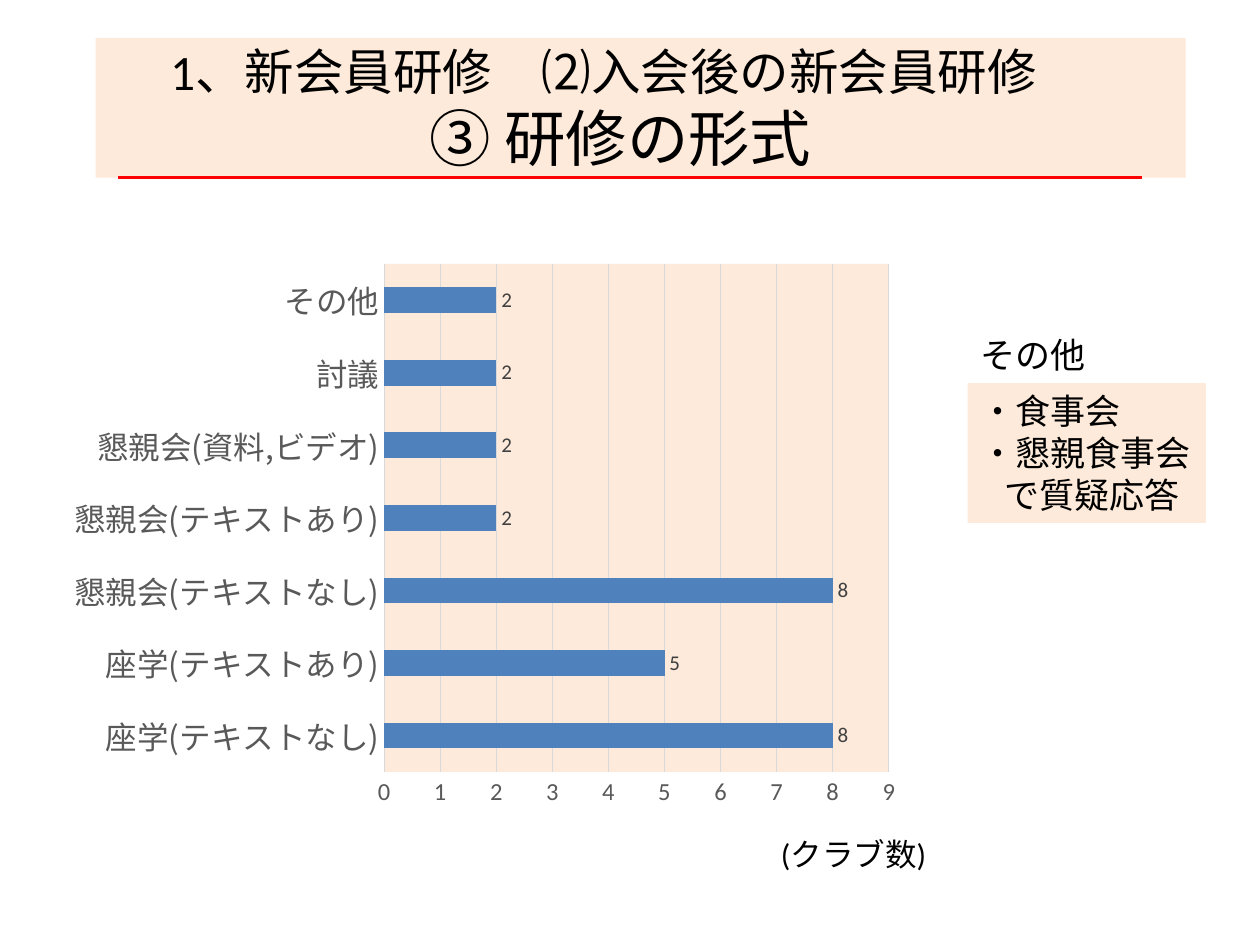
from lxml import etree
from pptx import Presentation
from pptx.chart.data import CategoryChartData
from pptx.dml.color import RGBColor
from pptx.enum.chart import XL_CHART_TYPE, XL_LABEL_POSITION, XL_TICK_MARK
from pptx.enum.shapes import MSO_CONNECTOR
from pptx.enum.text import MSO_ANCHOR, MSO_AUTO_SIZE, PP_ALIGN
from pptx.oxml import parse_xml
from pptx.oxml.ns import nsdecls, qn
from pptx.util import Inches, Pt

PEACH, GRID = "FDEADA", "D9D9D9"


def color(value):
    return RGBColor.from_string(value)


def style(font, size, value="000000", name="Calibri"):
    font.size, font.name = Pt(size), name
    font.color.rgb = color(value)


presentation = Presentation()
presentation.slide_width, presentation.slide_height = Inches(10), Inches(7.5)
slide = presentation.slides.add_slide(presentation.slide_layouts[1])
title, body = slide.placeholders

# Title and list panels
for panel, left, top, width, height in (
    (title, 0.76, 0.3, 8.65, 1.11),
    (body, 7.68, 3.04, 1.89, 1.11),
):
    panel.left, panel.top = Inches(left), Inches(top)
    panel.width, panel.height = Inches(width), Inches(height)
    panel.fill.solid()
    panel.fill.fore_color.rgb = color(PEACH)
    panel.text_frame.auto_size = MSO_AUTO_SIZE.NONE
    panel.text_frame.word_wrap = True

# Two-line title with a hanging indent
title.text_frame.vertical_anchor = MSO_ANCHOR.MIDDLE
paragraph = title.text_frame.paragraphs[0]
paragraph.alignment = PP_ALIGN.LEFT
properties = paragraph._p.get_or_add_pPr()
properties.set("marL", str(Inches(2.55)))
properties.set("indent", str(Inches(-2.06)))
run = paragraph.add_run()
run.text = "1、新会員研修　⑵入会後の新会員研修"
style(run.font, 28.3)
paragraph.add_line_break()
run = paragraph.add_run()
run.text = "③ 研修の形式　"
style(run.font, 35.1)

# List of other formats
for index, (item, hanging) in enumerate((("・食事会", 0), ("・懇親食事会で質疑応答", 0.19))):
    frame = body.text_frame
    paragraph = frame.add_paragraph() if index else frame.paragraphs[0]
    paragraph.space_before = Pt(0)
    properties = paragraph._p.get_or_add_pPr()
    properties.set("marL", str(Inches(hanging)))
    properties.set("indent", str(Inches(-hanging)))
    etree.SubElement(properties, qn("a:buNone"))
    run = paragraph.add_run()
    run.text = item
    style(run.font, 20)

# Red rule under the title
rule = slide.shapes.add_connector(
    MSO_CONNECTOR.STRAIGHT, Inches(0.94), Inches(1.41), Inches(9.06), Inches(1.41))
rule.line.color.rgb = color("FF0000")
rule.line.width = Pt(1.5)
etree.SubElement(rule._element.spPr, qn("a:effectLst"))

# Bar chart of training formats
chart_data = CategoryChartData()
chart_data.categories = [
    "座学(テキストなし)", "座学(テキストあり)", "懇親会(テキストなし)",
    "懇親会(テキストあり)", "懇親会(資料,ビデオ)", "討議", "その他"]
chart_data.add_series("Series 1", (8, 5, 8, 2, 2, 2, 2))
chart = slide.shapes.add_chart(
    XL_CHART_TYPE.BAR_CLUSTERED, Inches(0.59), Inches(1.54),
    Inches(6.72), Inches(5.04), chart_data).chart
chart.has_legend = chart.has_title = False
style(chart.font, 10)

plot = chart.plots[0]
plot.gap_width = 182
plot.vary_by_categories = False
series = plot.series[0]
series.format.fill.solid()
series.format.fill.fore_color.rgb = color("4F81BD")
labels = series.data_labels
labels.show_value = True
labels.position = XL_LABEL_POSITION.OUTSIDE_END
style(labels.font, 12, "404040")

category_axis, value_axis = chart.category_axis, chart.value_axis
for axis in (category_axis, value_axis):
    axis.major_tick_mark = axis.minor_tick_mark = XL_TICK_MARK.NONE
style(category_axis.tick_labels.font, 18, "595959", "Noto Sans CJK JP")
style(value_axis.tick_labels.font, 14, "595959")
value_axis.minimum_scale, value_axis.maximum_scale = 0, 9
value_axis.major_unit = 1
value_axis.format.line.fill.background()
for line in (category_axis.format.line, value_axis.major_gridlines.format.line):
    line.color.rgb = color(GRID)
    line.width = Pt(0.75)

# Plot area position and fill
plot_area = chart._chartSpace.chart.plotArea
for layout in plot_area.findall(qn("c:layout")):
    plot_area.remove(layout)
positions = "".join(
    f'<c:{tag} val="{value}"/>' for tag, value in (
        ("layoutTarget", "inner"), ("xMode", "edge"), ("yMode", "edge"),
        ("x", 0.366), ("y", 0.11), ("w", 0.596), ("h", 0.8)))
plot_area.insert(0, parse_xml(
    f'<c:layout {nsdecls("c")}><c:manualLayout>{positions}</c:manualLayout></c:layout>'))
plot_area.append(parse_xml(
    f'<c:spPr {nsdecls("c", "a")}><a:solidFill><a:srgbClr val="{PEACH}"/>'
    '</a:solidFill></c:spPr>'))

# Unit and list heading
for text, left, top, width, height, size in (
    ("(クラブ数)", 6.1, 6.58, 1.73, 0.4, 18),
    ("その他", 7.68, 2.6, 1.42, 0.44, 20),
):
    label = slide.shapes.add_textbox(Inches(left), Inches(top), Inches(width), Inches(height))
    label.text_frame.word_wrap = True
    run = label.text_frame.paragraphs[0].add_run()
    run.text = text
    style(run.font, size)

presentation.save("out.pptx")
